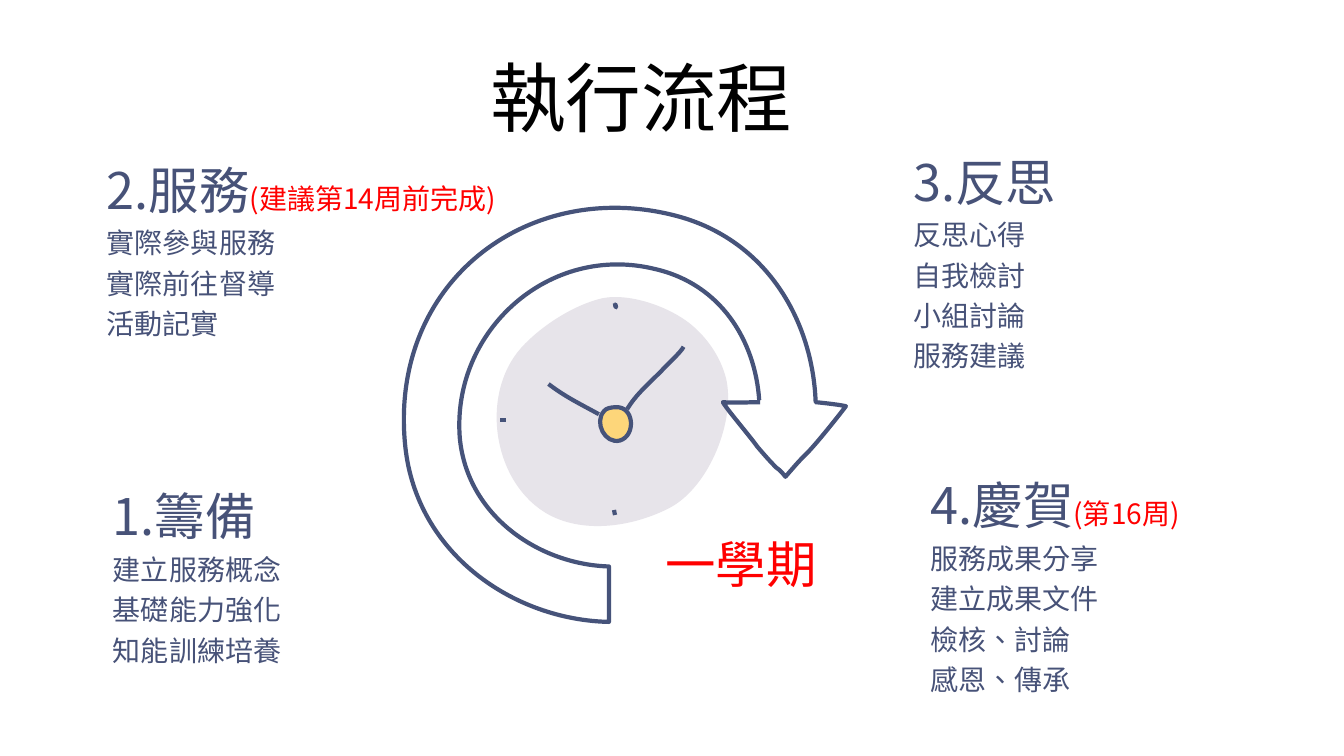
from lxml import etree
from pptx import Presentation
from pptx.dml.color import RGBColor
from pptx.enum.text import MSO_ANCHOR, MSO_AUTO_SIZE, PP_ALIGN
from pptx.oxml.ns import qn
from pptx.util import Inches, Pt

FONT = "Noto Sans CJK JP"
BLACK = RGBColor(0x00, 0x00, 0x00)
RED = RGBColor(0xFF, 0x00, 0x00)
TEXT_BLUE = RGBColor(0x47, 0x52, 0x78)
LINE_BLUE = RGBColor(0x46, 0x53, 0x7A)
GREY = RGBColor(0xE7, 0xE4, 0xEA)
YELLOW = RGBColor(0xFD, 0xD6, 0x7A)

prs = Presentation()
prs.slide_width, prs.slide_height = Inches(13.33), Inches(7.5)
s = prs.slides.add_slide(prs.slide_layouts[6])


def format_run(r, size, color):
    r.font.size = Pt(size)
    r.font.name = FONT
    r.font.color.rgb = color
    r.font._element.set("lang", "zh-TW")
    etree.SubElement(r.font._element, qn("a:ea")).set("typeface", FONT)


def draw_outline(shapes, box, start, segments, fill=None, line=LINE_BLUE, close=False):
    """Segments hold one end point (line) or two controls and an end (cubic)."""
    left, top, width, height = [Inches(v) for v in box]
    builder = shapes.build_freeform(Inches(start[0]), Inches(start[1]))
    builder.add_line_segments([(Inches(seg[-2]), Inches(seg[-1])) for seg in segments],
                              close=close)
    sp = builder.convert_to_shape()
    sp.left, sp.top, sp.width, sp.height = left, top, width, height
    # Bend the straight pieces into cubic curves within the box
    outline = sp._element.find(".//" + qn("a:path"))
    outline.set("w", str(width))
    outline.set("h", str(height))
    for step, seg in zip(list(outline), [start] + segments):
        if len(seg) == 6:
            step_curve = etree.Element(qn("a:cubicBezTo"))
            outline.replace(step, step_curve)
            step = step_curve
        for pt in list(step):
            step.remove(pt)
        for x, y in zip(seg[::2], seg[1::2]):
            pt = etree.SubElement(step, qn("a:pt"))
            pt.set("x", str(Inches(x) - left))
            pt.set("y", str(Inches(y) - top))
    sp.shadow.inherit = False
    if fill is None:
        sp.fill.background()
    else:
        sp.fill.solid()
        sp.fill.fore_color.rgb = fill
    if line is None:
        sp.line.fill.background()
    else:
        sp.line.color.rgb = line
        sp.line.width = Pt(3)


# Clock face and hub
clock = s.shapes.add_group_shape().shapes
draw_outline(clock, (4.93, 2.95, 2.29, 2.27), (6.9, 3.26), [
    (6.69, 3.06, 6.26, 2.9, 5.97, 2.96), (5.68, 3.03, 5.36, 3.24, 5.17, 3.45),
    (4.75, 3.92, 4.89, 4.81, 5.45, 5.11), (5.81, 5.3, 6.29, 5.22, 6.64, 5.04),
    (7.04, 4.83, 7.3, 4.16, 7.2, 3.75), (7.15, 3.56, 7.04, 3.39, 6.9, 3.26),
], fill=GREY, line=None, close=True)
draw_outline(clock, (5.95, 4.04, 0.31, 0.34), (6.11, 4.04), [
    (6.06, 4.04, 6.01, 4.05, 5.99, 4.08), (5.89, 4.19, 6, 4.41, 6.15, 4.37),
    (6.31, 4.32, 6.29, 4.03, 6.11, 4.04),
], fill=YELLOW, close=True)

# Clock hands and hour ticks
for box, start, curves in [
    ((5.44, 3.81, 0.5, 0.3), (5.44, 3.81), [(5.61, 3.94, 5.76, 4.01, 5.94, 4.11)]),
    ((6.22, 3.44, 0.55, 0.62), (6.22, 4.06), [(6.3, 3.92, 6.45, 3.79, 6.56, 3.68),
                                              (6.61, 3.62, 6.75, 3.5, 6.78, 3.44)]),
    ((6.09, 3.01, 0.02, 0.03), (6.09, 3.02), [(6.09, 3.03, 6.11, 3.01, 6.11, 3.05),
                                              (6.1, 3.04, 6.1, 3.03, 6.1, 3.01)]),
    ((4.96, 4.17, 0.06, 0.01), (4.96, 4.17), [(4.99, 4.17, 5, 4.17, 5.02, 4.17)]),
    ((6.09, 5.06, 0.02, 0.06), (6.09, 5.06), [(6.09, 5.08, 6.1, 5.1, 6.1, 5.11)]),
]:
    draw_outline(clock, box, start, curves)

# Circular arrow
draw_outline(clock, (4, 2.06, 4.38, 4.11), (7.54, 3.99), [
    (7.42, 3.99, 7.29, 4, 7.17, 3.99), (7.2, 4.05, 7.44, 4.33, 7.51, 4.43),
    (7.57, 4.5, 7.63, 4.57, 7.7, 4.64), (7.73, 4.66, 7.76, 4.69, 7.79, 4.73),
    (7.86, 4.65, 7.91, 4.59, 7.97, 4.53), (8.07, 4.44, 8.33, 4.11, 8.39, 4.03),
    (8.3, 4.01, 8.09, 3.99, 8.09, 3.99), (8.06, 3.17, 7.59, 2.35, 6.66, 2.13),
    (5.22, 1.78, 3.85, 2.81, 4.02, 4.43), (4.13, 5.49, 5.09, 6.15, 6.04, 6.17),
    (6.04, 5.62), (5.35, 5.6, 4.63, 5.12, 4.56, 4.34),
    (4.48, 3.28, 5.45, 2.41, 6.5, 2.67), (7.15, 2.82, 7.49, 3.38, 7.53, 3.97),
])

# Title and duration label
for text, box, size, color, align, spacing in [
    ("執行流程", (4.73, 0.46, 3.23, 1.01), 54, BLACK, PP_ALIGN.RIGHT, 1.0),
    ("一學期", (6.5, 5.12, 1.72, 0.73), 36, RED, PP_ALIGN.LEFT, 1.2),
]:
    tf = s.shapes.add_textbox(*[Inches(v) for v in box]).text_frame
    tf.word_wrap = False
    tf.auto_size = MSO_AUTO_SIZE.SHAPE_TO_FIT_TEXT
    tf.text = text
    p = tf.paragraphs[0]
    p.alignment = align
    p.line_spacing = spacing
    format_run(p.runs[0], size, color)

# Four stages: heading, red note, details
for box, heading, note, details in [
    ((1.08, 4.67, 2.32, 1.97), "1.籌備", "",
     ["建立服務概念", "基礎能力強化", "知能訓練培養"]),
    ((1.02, 1.43, 4.76, 1.97), "2.服務", "(建議第14周前完成)",
     ["實際參與服務", "實際前往督導", "活動記實"]),
    ((9.02, 1.32, 2.97, 2.43), "3.反思", "",
     ["反思心得", "自我檢討", "小組討論", "服務建議"]),
    ((9.19, 4.53, 3.85, 2.43), "4.慶賀", "(第16周)",
     ["服務成果分享", "建立成果文件", "檢核、討論", "感恩、傳承"]),
]:
    tf = s.shapes.add_textbox(*[Inches(v) for v in box]).text_frame
    tf.word_wrap = True
    tf.auto_size = MSO_AUTO_SIZE.SHAPE_TO_FIT_TEXT
    tf.vertical_anchor = MSO_ANCHOR.MIDDLE
    tf.margin_left = tf.margin_right = tf.margin_top = tf.margin_bottom = Inches(0.04)
    tf.text = "\n".join([heading] + details)
    for i, p in enumerate(tf.paragraphs):
        p.line_spacing = 1.2
        format_run(p.runs[0], 20 if i else 36, TEXT_BLUE)
    if note:
        r = tf.paragraphs[0].add_run()
        r.text = note
        format_run(r, 20, RED)

prs.save("out.pptx")
